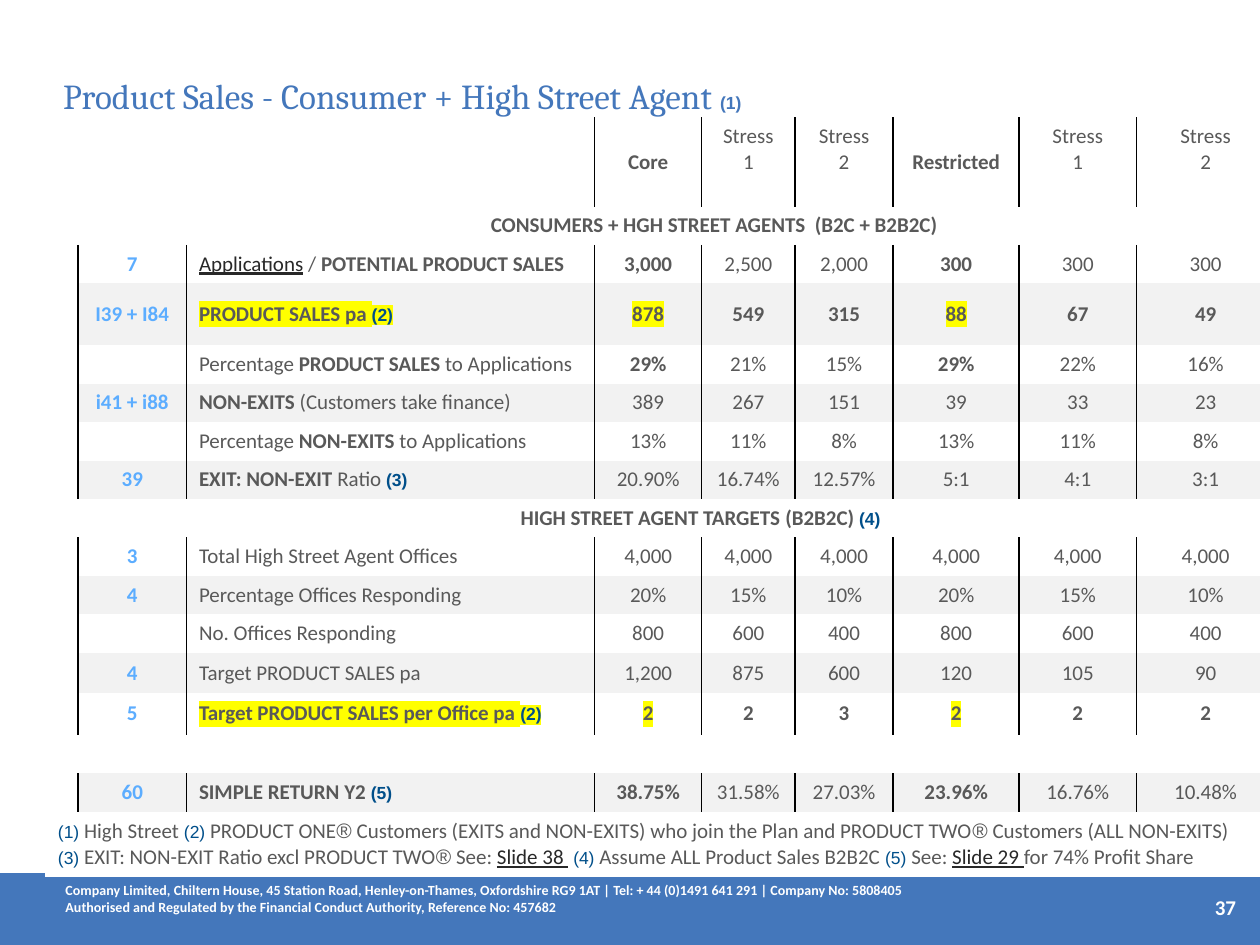
from pptx import Presentation
from pptx.dml.color import RGBColor
from pptx.enum import shapes, text
from pptx.oxml import parse_xml
from pptx.oxml.ns import nsdecls
from pptx.util import Inches, Pt

BLUE = RGBColor(0x44, 0x77, 0xBB)
SKY = RGBColor(0x5C, 0xAD, 0xFF)
NAVY = RGBColor(0x00, 0x4F, 0x8A)
GREY = RGBColor(0x59, 0x59, 0x59)
DARK = RGBColor(0x28, 0x28, 0x28)
BAND = RGBColor(0xF2, 0xF2, 0xF2)
WHITE = RGBColor(0xFF, 0xFF, 0xFF)

# Span formats
PLAIN = dict(size=12, name="Calibri", color=GREY)
BOLD = dict(PLAIN, bold=True)
REF = dict(BOLD, color=SKY)
LINK = dict(PLAIN, color=DARK, underline=True)
SIGN = dict(PLAIN, name="Arial")
NOTE = dict(size=10, name="Arial", color=NAVY)
NOTE_BOLD = dict(NOTE, bold=True)
MARKED = dict(BOLD, highlight="FFFF00")
NOTE_MARKED = dict(NOTE_BOLD, highlight="FFFF00")
FOOTER = dict(size=8, name="Calibri", color=WHITE, bold=True)

# Content
TITLE = [("Product Sales - Consumer + High Street Agent ",
          dict(size=20, name="Cambria", color=BLUE)),
         ("(1)", dict(NOTE_BOLD, color=BLUE))]
HEADERS = [["Core"], ["Stress", "1"], ["Stress", "2"],
           ["Restricted"], ["Stress", "1"], ["Stress", "2"]]
LEADS = (0, 3)  # Core and Restricted

# Section rows: spans and extra left margin.
# Data rows: reference, label spans, values, emphasis ("", "lead", "all", "marked")
ROWS = [
    ([("CONSUMERS + HGH STREET AGENTS  (B2C + B2B2C)", BOLD)], 0.86),
    ("7", [("Applications", LINK), (" / ", PLAIN), ("POTENTIAL PRODUCT SALES", BOLD)],
     "3,000 2,500 2,000 300 300 300", "lead"),
    ("I39 + I84", [("PRODUCT SALES pa ", MARKED), ("(2)", NOTE_MARKED)],
     "878 549 315 88 67 49", "marked"),
    ("", [("Percentage ", PLAIN), ("PRODUCT SALES ", BOLD), ("to Applications", PLAIN)],
     "29% 21% 15% 29% 22% 16%", "lead"),
    ("i41 + i88", [("NON-EXITS", BOLD), (" (Customers take finance)", PLAIN)],
     "389 267 151 39 33 23", ""),
    ("", [("Percentage ", PLAIN), ("NON-EXITS", BOLD), (" to Applications", PLAIN)],
     "13% 11% 8% 13% 11% 8%", ""),
    ("39", [("EXIT: NON-EXIT ", BOLD), ("Ratio ", PLAIN), ("(3)", NOTE_BOLD)],
     "20.90% 16.74% 12.57% 5:1 4:1 3:1", ""),
    ([("HIGH STREET AGENT TARGETS", BOLD), (" ", NOTE_BOLD), ("(B2B2C) ", BOLD),
      ("(4)", NOTE_BOLD)], 0.64),
    ("3", [("Total High Street Agent Offices", PLAIN)],
     "4,000 4,000 4,000 4,000 4,000 4,000", ""),
    ("4", [("Percentage Offices Responding", PLAIN)], "20% 15% 10% 20% 15% 10%", ""),
    ("", [("No. Offices Responding", PLAIN)], "800 600 400 800 600 400", ""),
    ("4", [("Target PRODUCT SALES pa", PLAIN)], "1,200 875 600 120 105 90", ""),
    ("5", [("Target PRODUCT SALES per Office pa ", MARKED), ("(2)", NOTE_MARKED)],
     "2 2 3 2 2 2", "marked"),
    ([], 0),
    ("60", [("SIMPLE RETURN Y2 ", BOLD), ("(5)", NOTE_BOLD)],
     "38.75% 31.58% 27.03% 23.96% 16.76% 10.48%", "lead"),
]
FOOTNOTES = [
    [("(1) ", NOTE), ("High Street ", PLAIN), ("(2) ", NOTE), ("PRODUCT ONE", PLAIN),
     ("®", SIGN), (" Customers (EXITS and NON-EXITS) who join the Plan and PRODUCT TWO", PLAIN),
     ("®", SIGN), (" Customers (ALL NON-EXITS)", PLAIN)],
    [("(3) ", NOTE), ("EXIT: NON-EXIT Ratio excl PRODUCT TWO", PLAIN), ("®", SIGN),
     (" See: ", PLAIN), ("Slide 38 ", LINK), (" ", PLAIN), ("(4) ", NOTE),
     ("Assume ALL Product Sales B2B2C ", PLAIN), ("(5) ", NOTE), ("See: ", PLAIN),
     ("Slide 29 ", LINK), ("for 74% Profit Share", PLAIN)],
]
ADDRESS = [
    "Company Limited, Chiltern House, 45 Station Road, Henley-on-Thames, Oxfordshire RG9 1AT"
    " | Tel: + 44 (0)1491 641 291 | Company No: 5808405",
    "Authorised and Regulated by the Financial Conduct Authority, Reference No: 457682",
]

# Table measures
COLUMNS = [0.26, 0.86, 3.24, 0.85, 0.74, 0.78, 1, 0.93, 0.79]
HEIGHTS = [0.71] + [0.3] * len(ROWS) + [0.52]
HEIGHTS[3] = 0.49
HEIGHTS[12:14] = [0.32, 0.33]
GREY_ROWS = {3, 5, 7, 10, 12, 15}


def add_span(para, words, size, name, color, bold=False, underline=False, highlight=None):
    span = para.add_run()
    span.text = words
    font = span.font
    font.size, font.name, font.bold, font.underline = Pt(size), name, bold, underline
    font.color.rgb = color
    if highlight:
        fill = font.fill._xPr.find("{*}solidFill")
        fill.addnext(parse_xml(f'<a:highlight {nsdecls("a")}>'
                               f'<a:srgbClr val="{highlight}"/></a:highlight>'))


def write(frame, paragraphs, align=text.PP_ALIGN.LEFT):
    for index, spans in enumerate(paragraphs):
        para = frame.add_paragraph() if index else frame.paragraphs[0]
        para.alignment = align
        for words, style in spans:
            add_span(para, words, **style)


def set_frame(frame, anchor):
    frame.margin_left = frame.margin_right = frame.margin_top = frame.margin_bottom = 0
    frame.word_wrap = True
    frame.auto_size = text.MSO_AUTO_SIZE.NONE
    frame.vertical_anchor = anchor


def set_borders(cell, sides):
    properties = cell._tc.get_or_add_tcPr()
    for index, side in enumerate("LRTB"):
        paint = ('<a:solidFill><a:srgbClr val="000000"/></a:solidFill>'
                 if side in sides else "<a:noFill/>")
        properties.insert(index, parse_xml(
            f'<a:ln{side} {nsdecls("a")} w="12700">{paint}</a:ln{side}>'))


def fill_cell(cell, paragraphs, align=text.PP_ALIGN.CENTER):
    write(cell.text_frame, paragraphs, align)


deck = Presentation()
deck.slide_width, deck.slide_height = Inches(10), Inches(7.5)
page = deck.slides.add_slide(deck.slide_layouts[5])

# Title
title = page.shapes.title
title.left, title.top, title.width, title.height = map(Inches, (0.5, 0.59, 9.24, 0.34))
set_frame(title.text_frame, text.MSO_ANCHOR.MIDDLE)
write(title.text_frame, [TITLE])

# Footer band, address and page number
band = page.shapes.add_shape(shapes.MSO_SHAPE.RECTANGLE, 0, Inches(6.93), Inches(10), Inches(0.57))
band.shadow.inherit = False
band.fill.solid()
band.fill.fore_color.rgb = BLUE
band.line.fill.background()
for place, paragraphs, align, anchor in (
        ((0.52, 7, 8.6, 0.27), [[(line, FOOTER)] for line in ADDRESS],
         text.PP_ALIGN.LEFT, text.MSO_ANCHOR.TOP),
        ((9.34, 7.1, 0.47, 0.2), [[("37", dict(FOOTER, size=12))]],
         text.PP_ALIGN.RIGHT, text.MSO_ANCHOR.MIDDLE)):
    box = page.shapes.add_textbox(*map(Inches, place))
    set_frame(box.text_frame, anchor)
    write(box.text_frame, paragraphs, align)

# Table grid
table = page.shapes.add_table(len(HEIGHTS), len(COLUMNS), Inches(0.36), Inches(0.93),
                              Inches(sum(COLUMNS)), Inches(sum(HEIGHTS))).table
table.first_row = table.horz_banding = False
for column, width in zip(table.columns, COLUMNS):
    column.width = Inches(width)
for row, height in zip(table.rows, HEIGHTS):
    row.height = Inches(height)
last = len(HEIGHTS) - 1
full_rows = {n for n, row in enumerate(ROWS, 1) if len(row) == 2} | {last}
for r in range(len(HEIGHTS)):
    for c in range(len(COLUMNS)):
        cell = table.cell(r, c)
        cell.vertical_anchor = text.MSO_ANCHOR.MIDDLE
        cell.fill.solid()
        cell.fill.fore_color.rgb = BAND if r in GREY_ROWS and c else WHITE
        inner = r not in full_rows and (r or c > 1)
        set_borders(cell, "" if not inner else "LR" if c else "R")
    if r in full_rows:
        table.cell(r, 0).merge(table.cell(r, len(COLUMNS) - 1))
table.cell(0, 0).merge(table.cell(0, 2))

# Table text
for c, lines in enumerate(HEADERS):
    cell = table.cell(0, c + 3)
    fill_cell(cell, [[(line, BOLD if c in LEADS else PLAIN)] for line in lines])
    if c not in LEADS:
        cell.vertical_anchor = text.MSO_ANCHOR.TOP
for r, row in enumerate(ROWS, 1):
    if r in full_rows:
        spans, shift = row
        fill_cell(table.cell(r, 0), [spans])
        table.cell(r, 0).margin_left = Inches(0.1 + shift)
        continue
    reference, label, values, emphasis = row
    if reference:
        fill_cell(table.cell(r, 1), [[(reference, REF)]])
    fill_cell(table.cell(r, 2), [label], text.PP_ALIGN.LEFT)
    lead = {"": PLAIN, "lead": BOLD, "marked": MARKED}[emphasis]
    other = BOLD if emphasis == "marked" else PLAIN
    for c, value in enumerate(values.split()):
        fill_cell(table.cell(r, c + 3), [[(value, lead if c in LEADS else other)]])
fill_cell(table.cell(last, 0), FOOTNOTES, text.PP_ALIGN.LEFT)

# Empty cells must not stretch their rows
for cell in table.iter_cells():
    if not cell.text_frame.text:
        cell.margin_top = cell.margin_bottom = 0

deck.save("out.pptx")
